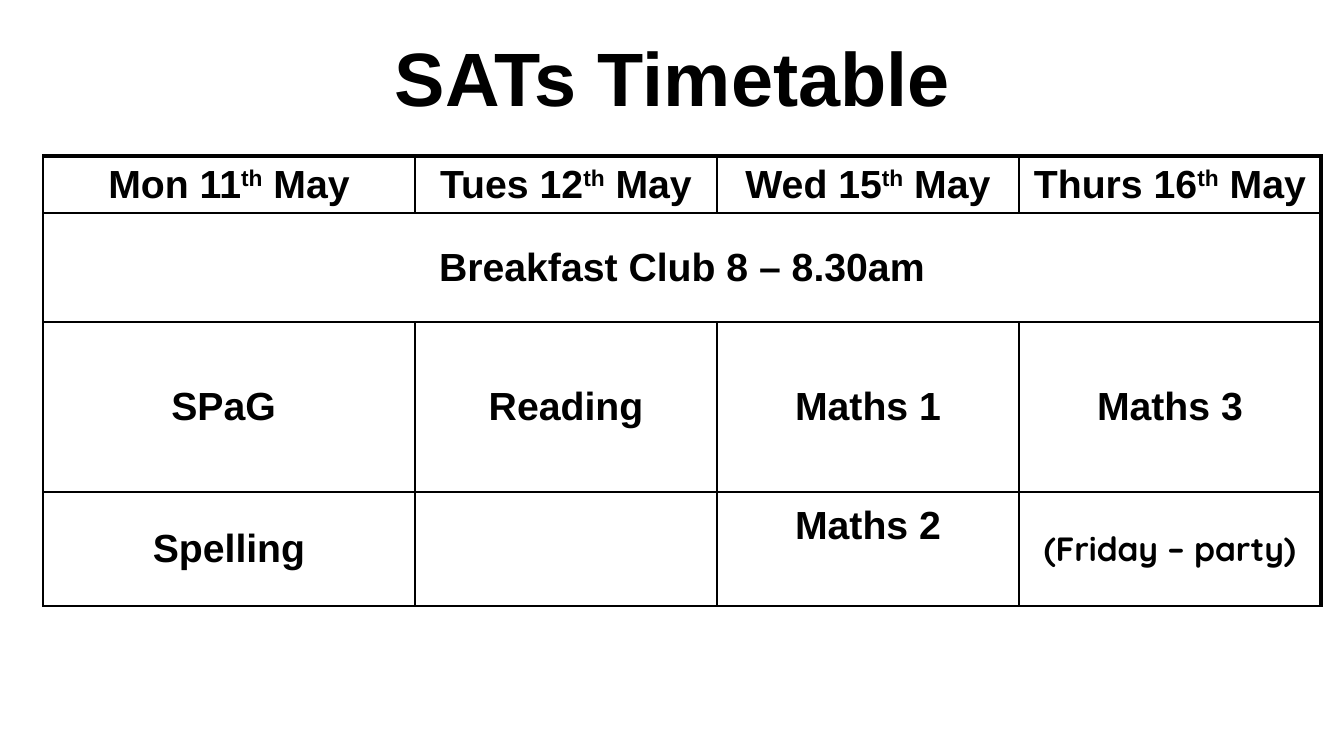
from pptx import Presentation
from pptx import util as u
from pptx.dml.color import RGBColor
from pptx.enum import text
from pptx.oxml.ns import qn
from lxml import etree

SCALE = 914400 / 134.4
THEME = {
    "ink": "000000",
    "title": {"name": "Arial", "size": u.Pt(40.5), "bold": True},
    "body": {"name": "Arial", "size": u.Pt(21), "bold": True},
    "note": {"name": "Quicksand", "size": u.Pt(18), "bold": True},
    "thin": 1,
    "thick": 2.25,
}
COLUMNS = [372, 302, 302, 302]
ROWS = [57, 109, 170, 114]
# A caret marks the start and end of a superscript.
TIMETABLE = [
    ["Mon 11^th^ May", "Tues 12^th^ May", "Wed 15^th^ May", "Thurs 16^th^ May"],
    ["Breakfast Club 8 – 8.30am", "", "", ""],
    ["SPaG ", "Reading", "Maths 1", "Maths 3"],
    ["Spelling", "", "Maths 2", "(Friday – party)"],
]


def px(length):
    return u.Emu(round(length * SCALE))


def add_run(paragraph, words, style):
    run = paragraph.add_run()
    run.text = words
    for name, value in THEME[style].items():
        setattr(run.font, name, value)
    run.font.color.rgb = RGBColor.from_string(THEME["ink"])
    return run


presentation = Presentation()
presentation.slide_width, presentation.slide_height = px(1344), px(756)
slide = presentation.slides.add_slide(presentation.slide_layouts[5])

title = slide.shapes.title
title.left, title.top, title.width, title.height = map(px, (219, 13, 907, 126))
title.text_frame.vertical_anchor = text.MSO_ANCHOR.MIDDLE
heading = title.text_frame.paragraphs[0]
heading.alignment = text.PP_ALIGN.CENTER
add_run(heading, "SATs Timetable", "title")

frame = slide.shapes.add_table(
    len(ROWS), len(COLUMNS), px(43), px(156), px(sum(COLUMNS)), px(sum(ROWS)))
table = frame.table
table.first_row = table.horz_banding = False
for column, width in zip(table.columns, COLUMNS):
    column.width = px(width)
for row, height in zip(table.rows, ROWS):
    row.height = px(height)
table.cell(1, 0).merge(table.cell(1, 3))

cell_format = {
    "margin_left": px(9), "margin_right": px(9),
    "margin_top": px(5), "margin_bottom": px(5),
    "vertical_anchor": text.MSO_ANCHOR.MIDDLE,
}
for row_index, row in enumerate(TIMETABLE):
    for column_index, words in enumerate(row):
        cell = table.cell(row_index, column_index)
        for name, value in cell_format.items():
            setattr(cell, name, value)

        at_right = column_index == len(COLUMNS) - 1 or cell.is_merge_origin
        heavy_sides = {"lnT": row_index == 0, "lnR": at_right}
        properties = cell._tc.get_or_add_tcPr()
        for side in ("lnL", "lnR", "lnT", "lnB"):
            weight = THEME["thick" if heavy_sides.get(side) else "thin"]
            line = etree.SubElement(properties, qn(f"a:{side}"), w=str(u.Pt(weight)))
            fill = etree.SubElement(line, qn("a:solidFill"))
            etree.SubElement(fill, qn("a:srgbClr"), val=THEME["ink"])
        cell.fill.background()

        if not words:
            continue
        paragraph = cell.text_frame.paragraphs[0]
        paragraph.alignment = text.PP_ALIGN.CENTER
        style = "note" if words.startswith("(") else "body"
        for part_index, part in enumerate(words.split("^")):
            run = add_run(paragraph, part, style)
            if part_index == 1:
                run.font._element.set("baseline", "30000")

second_maths = table.cell(3, 2)
second_maths.vertical_anchor = text.MSO_ANCHOR.TOP
second_maths.margin_top = px(12)

presentation.save("out.pptx")
